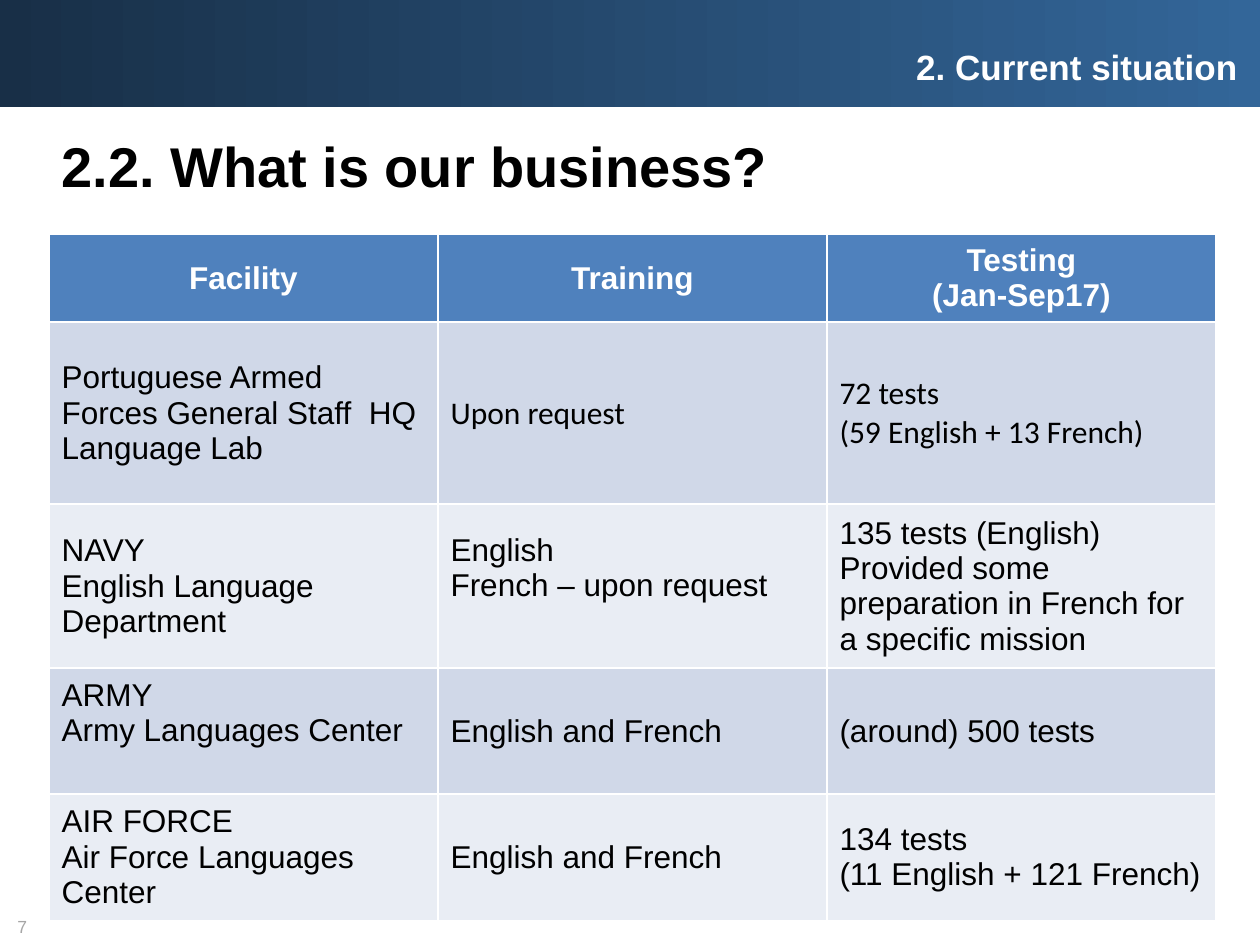
from dataclasses import dataclass

from pptx import Presentation
from pptx.dml.color import RGBColor
from pptx.enum.shapes import MSO_SHAPE
from pptx.enum.text import MSO_ANCHOR, PP_ALIGN
from pptx.util import Emu, Pt

RECTANGLE = MSO_SHAPE.RECTANGLE
MIDDLE = MSO_ANCHOR.MIDDLE
LEFT, CENTER, RIGHT = PP_ALIGN.LEFT, PP_ALIGN.CENTER, PP_ALIGN.RIGHT
PX_PER_INCH = 126


def px(length):
    return Emu(round(length * 914400 / PX_PER_INCH))


@dataclass(frozen=True)
class Theme:
    font: str = "Arial"
    alternate_font: str = "Calibri"
    white: str = "FFFFFF"
    black: str = "000000"
    muted: str = "A6A6A6"
    banner_start: str = "182F47"
    banner_end: str = "336699"
    header: str = "4F81BD"
    bands: tuple = ("D0D8E8", "E9EDF4")
    title_size: int = 32
    section_size: int = 20
    table_size: int = 18
    number_size: int = 10


class SlideBuilder:
    def __init__(self, slide, theme):
        self.slide = slide
        self.theme = theme

    def set_lines(self, frame, lines, size, color, bold=False, align=LEFT, font=None):
        frame.word_wrap = True
        frame.text = "\n".join(lines)
        for paragraph in frame.paragraphs:
            paragraph.alignment = align
            paragraph.font.name = font or self.theme.font
            paragraph.font.size = Pt(size)
            paragraph.font.bold = bold
            paragraph.font.color.rgb = RGBColor.from_string(color)

    def banner(self, left, top, width, height):
        band = self.slide.shapes.add_shape(
            RECTANGLE, px(left), px(top), px(width), px(height))
        band.shadow.inherit = False
        band.line.fill.background()
        band.fill.gradient()
        band.fill.gradient_angle = 0
        ends = (self.theme.banner_start, self.theme.banner_end)
        for position, (stop, color) in enumerate(zip(band.fill.gradient_stops, ends)):
            stop.position = position
            stop.color.rgb = RGBColor.from_string(color)

    def text(self, left, top, width, height, line, size, color, **style):
        box = self.slide.shapes.add_textbox(px(left), px(top), px(width), px(height))
        self.set_lines(box.text_frame, [line], size, color, **style)

    def table(self, left, top, column_width, row_heights, rows, alternate, raised):
        columns = len(rows[0])
        grid = self.slide.shapes.add_table(
            len(rows), columns, px(left), px(top),
            px(column_width * columns), px(sum(row_heights))).table
        for column in grid.columns:
            column.width = px(column_width)
        for r, (height, row) in enumerate(zip(row_heights, rows)):
            grid.rows[r].height = px(height)
            heading = r == 0
            fill = self.theme.header if heading else self.theme.bands[(r - 1) % 2]
            for c, lines in enumerate(row):
                cell = grid.cell(r, c)
                cell.fill.solid()
                cell.fill.fore_color.rgb = RGBColor.from_string(fill)
                cell.vertical_anchor = MIDDLE
                if (r, c) in raised:
                    cell.margin_bottom = px(42)
                self.set_lines(
                    cell.text_frame, lines, self.theme.table_size,
                    self.theme.white if heading else self.theme.black,
                    bold=heading, align=CENTER if heading else LEFT,
                    font=self.theme.alternate_font if (r, c) in alternate else None)


FACILITIES = [
    (["Facility"], ["Training"], ["Testing", "(Jan-Sep17)"]),
    (["Portuguese Armed Forces General Staff  HQ", "Language Lab"],
     ["Upon request"],
     ["72 tests", "(59 English + 13 French)"]),
    (["NAVY", "English Language Department"],
     ["English", "French – upon request"],
     ["135 tests (English)",
      "Provided some preparation in French for a specific mission"]),
    (["ARMY", "Army Languages Center"],
     ["English and French"],
     ["(around) 500 tests"]),
    (["AIR FORCE", "Air Force Languages Center"],
     ["English and French"],
     ["134 tests", "(11 English + 121 French)"]),
]


def main():
    deck = Presentation()
    deck.slide_width, deck.slide_height = px(1260), px(945)
    theme = Theme()
    page = SlideBuilder(deck.slides.add_slide(deck.slide_layouts[6]), theme)
    page.banner(0, 0, 1260, 107)
    page.text(5, 910, 64, 34, "7", theme.number_size, theme.muted)
    page.text(98, 39, 1152, 55, "2. Current situation", theme.section_size,
              theme.white, bold=True, align=RIGHT)
    page.table(49, 234, 389, (87, 182, 164, 126, 126), FACILITIES,
               alternate={(1, 1), (1, 2)}, raised={(2, 1), (3, 0)})
    page.text(49, 125, 1182, 81, "2.2. What is our business?", theme.title_size,
              theme.black, bold=True)
    deck.save("out.pptx")


if __name__ == "__main__":
    main()
